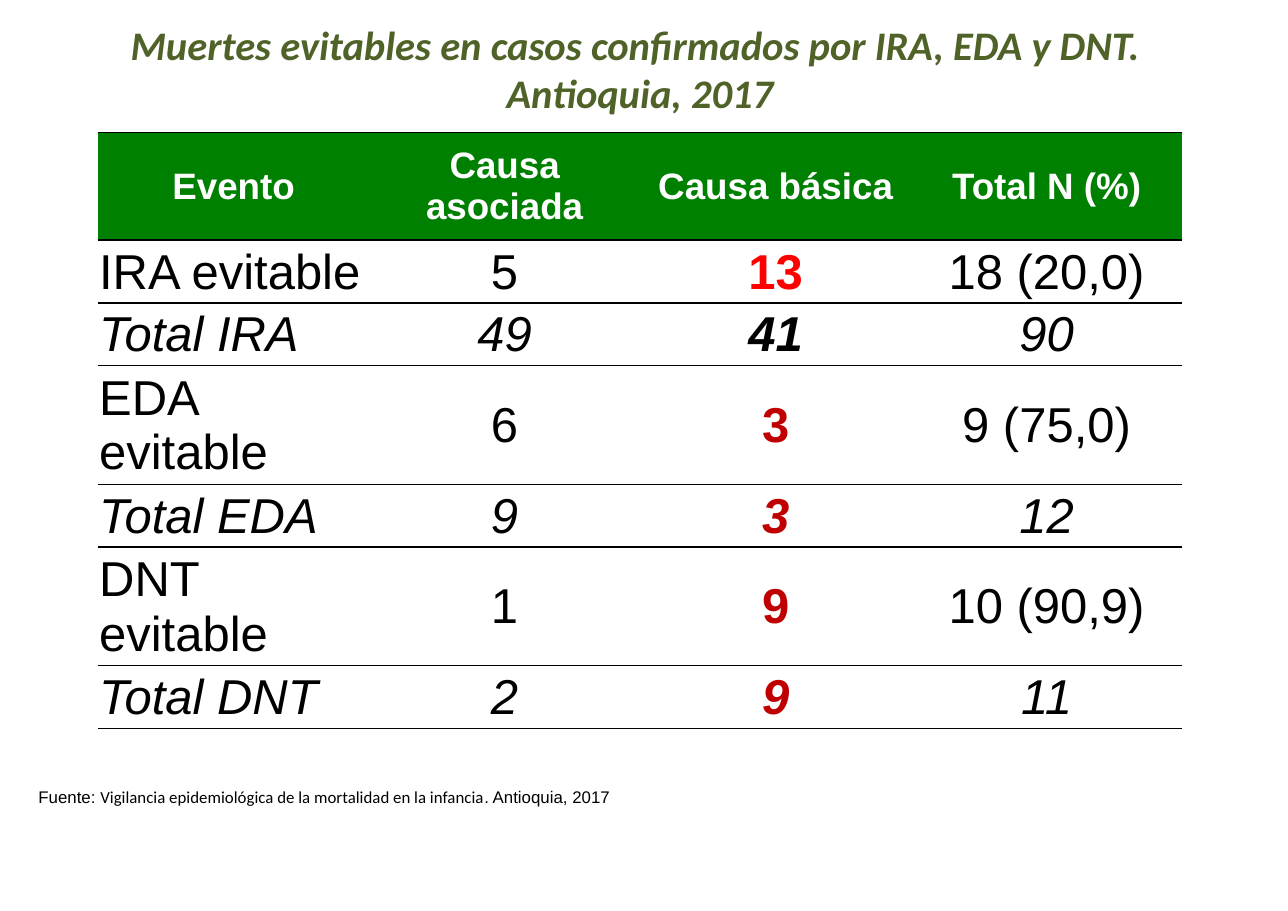
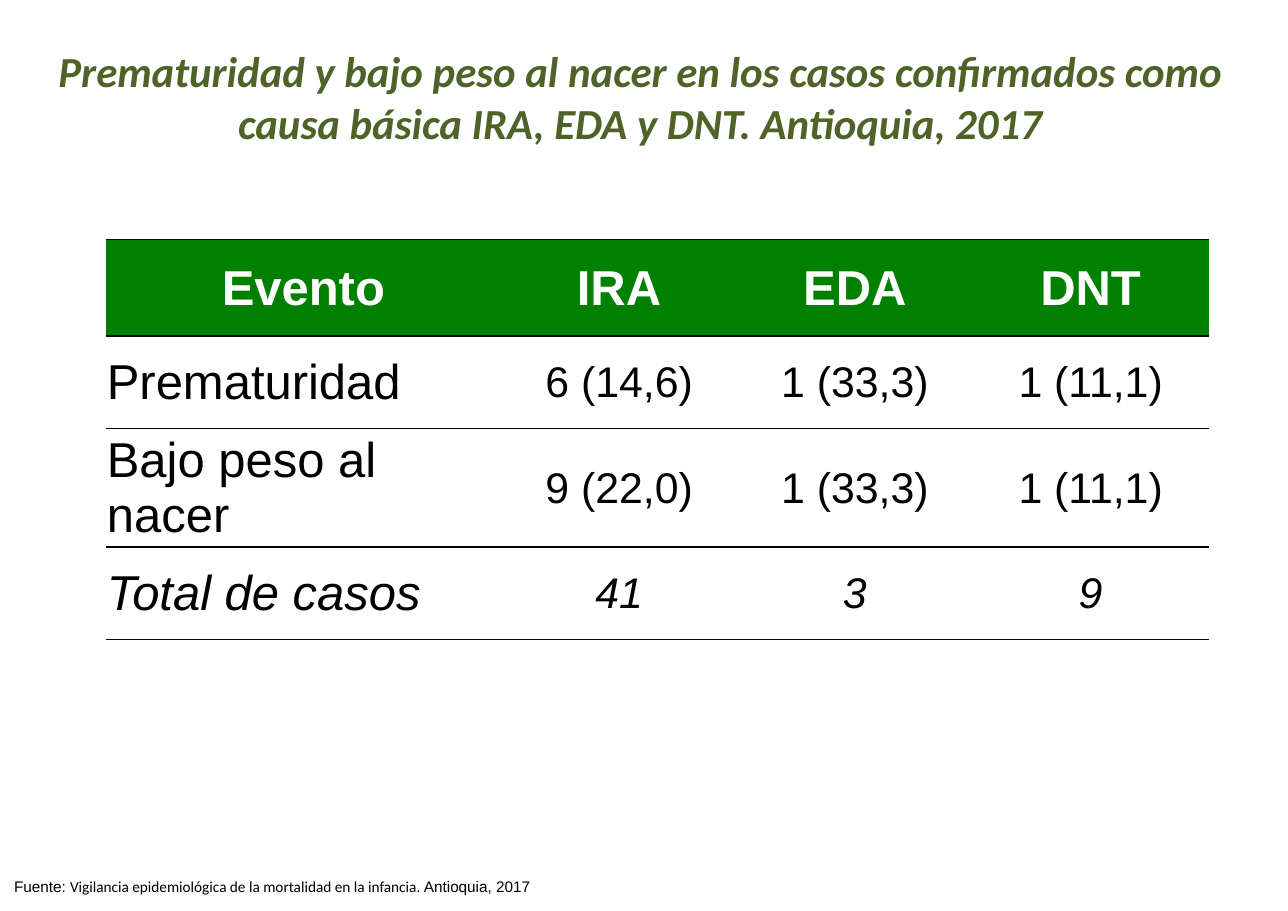
import pptx
import pptx.dml.color
import pptx.enum.text
import pptx.oxml
import pptx.oxml.ns
import pptx.util

PX = 9144  # 100 px to the inch
GREEN, OLIVE, BLACK, WHITE = "008000", "4F6228", "000000", "FFFFFF"
RED, DARK_RED = "FF0000", "C00000"
CENTER = pptx.enum.text.PP_ALIGN.CENTER
LEFT = pptx.enum.text.PP_ALIGN.LEFT
SOURCE = [("Fuente: ", "Arial"),
          ("Vigilancia epidemiológica de la mortalidad en la infancia", "Calibri"),
          (". Antioquia, 2017", "Arial")]


def px(*lengths):
    return [pptx.util.Emu(length * PX) for length in lengths]


def color(hex_string):
    return pptx.dml.color.RGBColor.from_string(hex_string)


def style(font, size, hex_string, name="Arial", bold=False, italic=False):
    font.size, font.name = pptx.util.Pt(size), name
    font.bold, font.italic = bold, italic
    font.color.rgb = color(hex_string)


def add_text_frame(slide, box):
    frame = slide.shapes.add_textbox(*px(*box)).text_frame
    frame.word_wrap = True
    frame.auto_size = pptx.enum.text.MSO_AUTO_SIZE.SHAPE_TO_FIT_TEXT
    return frame


def add_title(slide, box, lines, size):
    frame = add_text_frame(slide, box)
    frame.margin_left, frame.margin_top, frame.margin_right, frame.margin_bottom = px(11, 6, 11, 6)
    frame.text = "\n".join(lines)
    for paragraph in frame.paragraphs:
        paragraph.alignment = CENTER
        style(paragraph.font, size, OLIVE, "Calibri", bold=True, italic=True)


def add_source(slide, box, size):
    paragraph = add_text_frame(slide, box).paragraphs[0]
    for text, font_name in SOURCE:
        run = paragraph.add_run()
        run.text = text
        style(run.font, size, BLACK, font_name)


def set_borders(cell, top, bottom):
    """Rule a cell above and below, widths in points, with open sides."""
    properties = cell._tc.get_or_add_tcPr()
    namespace = pptx.oxml.ns.nsdecls("a")
    for index, (side, width) in enumerate(
            [("lnL", 0), ("lnR", 0), ("lnT", top), ("lnB", bottom)]):
        line = (f'<a:solidFill><a:srgbClr val="{BLACK}"/></a:solidFill>'
                if width else "<a:noFill/>")
        properties.insert(index, pptx.oxml.parse_xml(
            f'<a:{side} {namespace} w="{int(pptx.util.Pt(width))}">{line}</a:{side}>'))


def fill_cell(cell, text, alignment, fill=None, top=1, **font):
    cell.text = text
    cell.vertical_anchor = pptx.enum.text.MSO_ANCHOR.MIDDLE
    cell.margin_left, cell.margin_top, cell.margin_right, cell.margin_bottom = px(1, 1, 1, 0)
    if fill:
        cell.fill.solid()
        cell.fill.fore_color.rgb = color(fill)
    else:
        cell.fill.background()
    set_borders(cell, top, 1)
    paragraph = cell.text_frame.paragraphs[0]
    paragraph.alignment = alignment
    style(paragraph.font, **font)


def add_event_table(slide, origin, widths, heights, rows, header_size,
                    value_size, top_line=1, basic_cause_colors=None):
    """Place a header row and event rows; basic-cause colours mark column 2."""
    table = slide.shapes.add_table(
        len(rows), len(widths), *px(*origin, sum(widths), sum(heights))).table
    table.horz_banding = False
    for column, width in zip(table.columns, px(*widths)):
        column.width = width
    for row, height in zip(table.rows, px(*heights)):
        row.height = height

    for r, values in enumerate(rows):
        for c, text in enumerate(values):
            cell = table.cell(r, c)
            if r == 0:
                fill_cell(cell, text, CENTER, GREEN, top_line,
                          size=header_size, hex_string=WHITE, bold=True)
                continue
            marked = bool(basic_cause_colors) and c == 2
            fill_cell(cell, text, CENTER if c else LEFT,
                      size=value_size if c else 32,
                      hex_string=basic_cause_colors[r - 1] if marked else BLACK,
                      bold=marked, italic=values[0].startswith("Total"))


def build_avoidable_deaths(slide):
    add_title(slide, (26, 12, 1110, 100),
              ["Muertes evitables en casos confirmados por IRA, EDA y DNT. ",
               "Antioquia, 2017"], 26.5)
    add_source(slide, (25, 709, 906, 29), 11)
    add_event_table(
        slide, (89, 120), [246] * 4, [98] + [57] * 6,
        [("Evento", "Causa asociada", "Causa básica", "Total N (%)"),
         ("IRA evitable", "5", "13", "18 (20,0)"),
         ("Total IRA", "49", "41", "90"),
         ("EDA evitable", "6", "3", "9 (75,0)"),
         ("Total EDA", "9", "3", "12"),
         ("DNT evitable", "1", "9", "10 (90,9)"),
         ("Total DNT", "2", "9", "11")],
        header_size=24, value_size=32,
        basic_cause_colors=[RED, BLACK] + [DARK_RED] * 4)


def build_prematurity(slide):
    add_event_table(
        slide, (96, 217), [359] + [214] * 3, [88] + [84] * 3,
        [("Evento", "IRA", "EDA", "DNT"),
         ("Prematuridad", "6 (14,6)", "1 (33,3)", "1 (11,1)"),
         ("Bajo peso al nacer", "9 (22,0)", "1 (33,3)", "1 (11,1)"),
         ("Total de casos", "41", "3", "9")],
        header_size=32, value_size=28, top_line=0.5)
    add_title(slide, (26, 35, 1110, 105),
              ["Prematuridad y bajo peso al nacer en los casos confirmados como "
               "causa básica IRA, EDA y DNT. Antioquia, 2017"], 28)
    add_source(slide, (3, 791, 906, 27), 10)


def main():
    presentation = pptx.Presentation()
    presentation.slide_width, presentation.slide_height = px(1169, 827)
    for build in (build_avoidable_deaths, build_prematurity):
        build(presentation.slides.add_slide(presentation.slide_layouts[6]))
    presentation.save("out.pptx")


if __name__ == "__main__":
    main()
